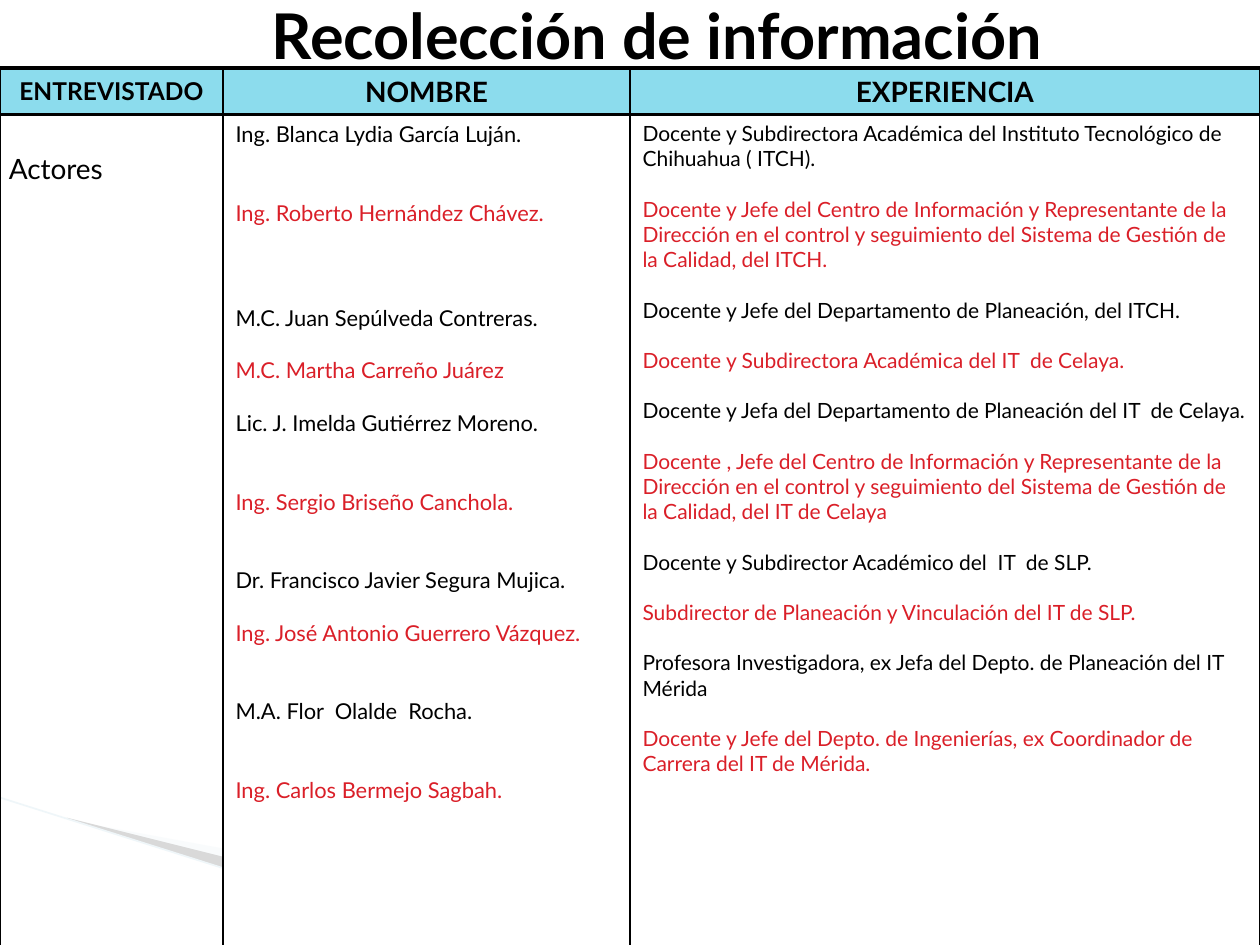
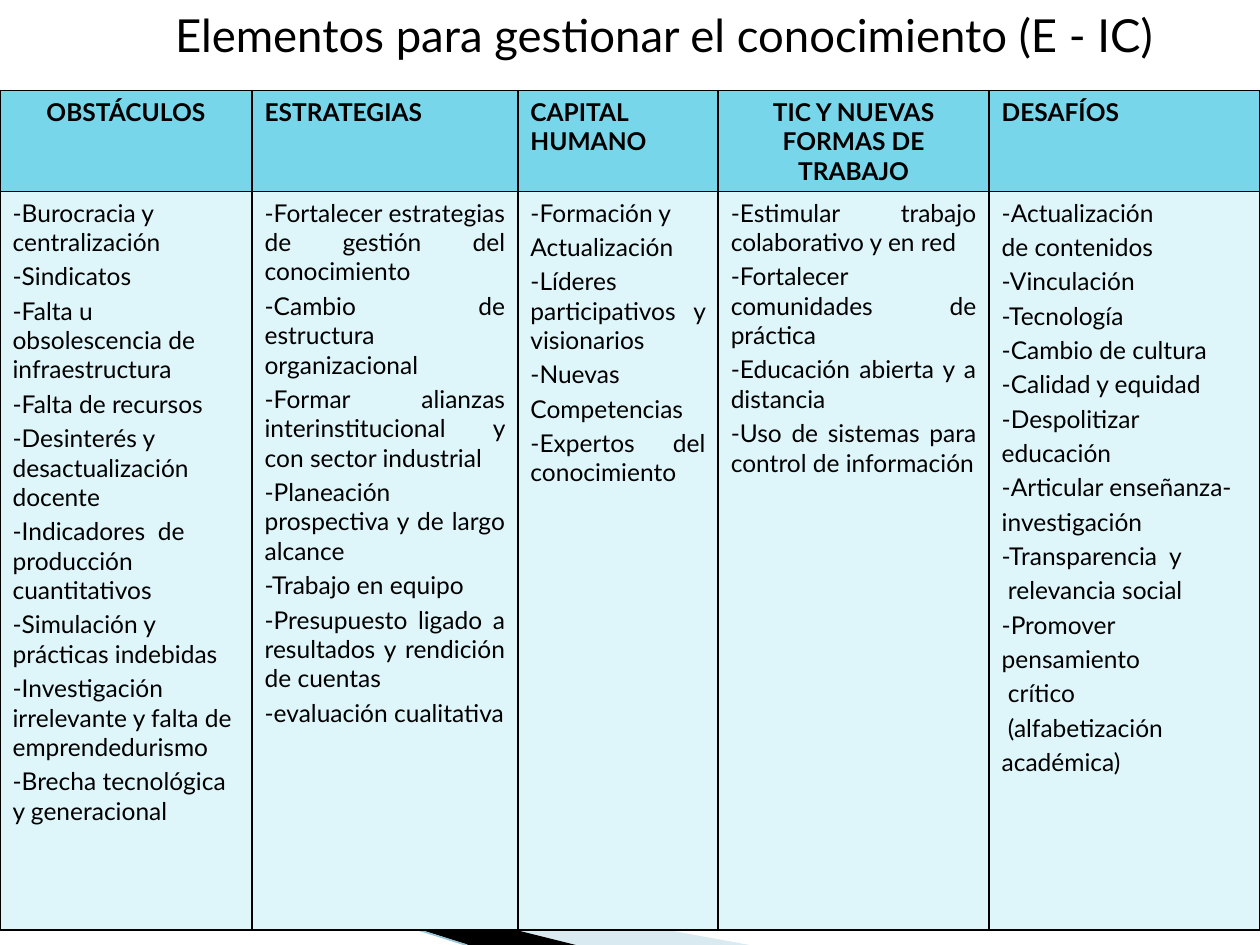
from dataclasses import dataclass
from typing import Optional

from lxml.etree import SubElement
from pptx import Presentation
from pptx.dml.color import RGBColor as Color
from pptx.enum.shapes import MSO_CONNECTOR as Connector
from pptx.enum.text import MSO_ANCHOR as Anchor, MSO_AUTO_SIZE as AutoSize, PP_ALIGN as Align
from pptx.oxml.ns import qn
from pptx.util import Emu, Inches, Pt

WIDTH, HEIGHT = Inches(10), Inches(7.5)


@dataclass(frozen=True)
class Theme:
    font: str = "Lato"
    ink: str = "000000"
    accent: str = "DA1F28"
    paper: str = "FFFFFF"
    header: str = "78D6EA"
    body: str = "DEF5FA"
    wave: str = "A0CBDC"
    wave_line: str = "97C5D8"
    line_height: float = 1.2
    thin: float = 1
    thick: float = 2.25


THEME = Theme()


@dataclass(frozen=True)
class Line:
    """One paragraph; before is in points, indent and hanging in inches."""
    text: str
    color: str = THEME.ink
    before: float = 0
    indent: float = 0
    hanging: float = 0


@dataclass(frozen=True)
class Borders:
    left: float = THEME.thin
    right: float = THEME.thin
    top: float = THEME.thin
    bottom: float = THEME.thin


@dataclass(frozen=True)
class CellSpec:
    lines: list[Line]
    size: float
    fill: str
    bold: bool = False
    align: Align = Align.LEFT
    anchor: Anchor = Anchor.TOP
    opacity: int = 100
    borders: Borders = Borders()
    margins: Optional[tuple[float, float]] = None  # sides and top, inches


@dataclass(frozen=True)
class Wedge:
    """A filled outline with points in percent of the slide."""
    points: list[tuple[float, float]]
    fill: str
    opacity: int = 100


WEDGES = [
    Wedge([(5.5, 86.8), (59.5, 100), (45.6, 100), (5.5, 86.67)], THEME.wave, 40),
    Wedge([(5.3, 86.53), (45.7, 100), (37.2, 100), (5.4, 86.67)], THEME.ink),
]


def across(percent: float) -> Emu:
    return Emu(round(WIDTH * percent / 100))


def down(percent: float) -> Emu:
    return Emu(round(HEIGHT * percent / 100))


def set_opacity(element, opacity: int) -> None:
    if opacity < 100:
        for color in element.iter(qn("a:srgbClr")):
            SubElement(color, qn("a:alpha"), val=str(opacity * 1000))


def style_font(para, size: float, color: str, bold: bool) -> None:
    para.font.name = THEME.font
    para.font.size = Pt(size)
    para.font.bold = bold
    para.font.color.rgb = Color.from_string(color)


def draw_wave(page) -> None:
    for wedge in WEDGES:
        start, *rest = [(across(x), down(y)) for x, y in wedge.points]
        builder = page.shapes.build_freeform(*start)
        builder.add_line_segments(rest, close=True)
        shape = builder.convert_to_shape()
        shape.shadow.inherit = False
        shape.fill.solid()
        shape.fill.fore_color.rgb = Color.from_string(wedge.fill)
        set_opacity(shape._element.spPr, wedge.opacity)
        shape.line.fill.background()
    edge = page.shapes.add_connector(
        Connector.STRAIGHT, 0, down(84.4), across(37), down(100))
    edge.line.color.rgb = Color.from_string(THEME.wave_line)
    edge.line.width = Pt(0.95)
    SubElement(edge._element.spPr, qn("a:effectLst"))


def add_page(deck, title: str, size: float, bold: bool):
    page = deck.slides.add_slide(deck.slide_layouts[5])
    box = page.shapes.title
    box.left, box.top = across(5.5), down(-3.6)
    box.width, box.height = across(94.5), down(14.53)
    frame = box.text_frame
    frame.text = title
    frame.auto_size = AutoSize.NONE
    frame.vertical_anchor = Anchor.MIDDLE
    para = frame.paragraphs[0]
    para.alignment = Align.CENTER
    style_font(para, size, THEME.ink, bold)
    draw_wave(page)
    return page


def draw_borders(cell, borders: Borders) -> None:
    properties = cell._tc.get_or_add_tcPr()
    sides = (("L", borders.left), ("R", borders.right),
             ("T", borders.top), ("B", borders.bottom))
    for place, (side, points) in enumerate(sides):
        line = SubElement(properties, qn(f"a:ln{side}"), w=str(Pt(points)))
        fill = SubElement(line, qn("a:solidFill"))
        SubElement(fill, qn("a:srgbClr"), val=THEME.ink)
        properties.insert(place, line)


def fill_cell(cell, spec: CellSpec) -> None:
    cell.fill.solid()
    cell.fill.fore_color.rgb = Color.from_string(spec.fill)
    set_opacity(cell._tc.get_or_add_tcPr(), spec.opacity)
    draw_borders(cell, spec.borders)
    cell.vertical_anchor = spec.anchor
    if spec.margins:
        side, top = spec.margins
        cell.margin_left = cell.margin_right = Inches(side)
        cell.margin_top, cell.margin_bottom = Inches(top), 0
    frame = cell.text_frame
    for number, line in enumerate(spec.lines):
        para = frame.add_paragraph() if number else frame.paragraphs[0]
        para.text = line.text
        para.alignment = spec.align
        if number:
            para.space_before = Pt(line.before)
        if line.indent or line.hanging:
            properties = para._p.get_or_add_pPr()
            properties.set("marL", str(Inches(line.indent + line.hanging)))
            properties.set("indent", str(-Inches(line.hanging)))
        style_font(para, spec.size, line.color, spec.bold)


def add_grid(page, top: float, widths: list[float], heights: list[float],
             rows: list[list[CellSpec]]) -> None:
    table = page.shapes.add_table(
        len(rows), len(widths), 0, down(top), WIDTH, down(sum(heights))).table
    table.first_row = table.horz_banding = False
    for column, width in zip(table.columns, widths):
        column.width = across(width)
    for row, height, specs in zip(table.rows, heights, rows):
        row.height = down(height)
        for cell, spec in zip(row.cells, specs):
            fill_cell(cell, spec)


def alternating(entries: list[tuple[int, str]], size: float) -> list[Line]:
    """Lines in alternate colours, each after a number of line heights."""
    colors = (THEME.ink, THEME.accent)
    return [Line(text, colors[number % 2], gap * size * THEME.line_height)
            for number, (gap, text) in enumerate(entries)]


# Slide 1: people interviewed
PEOPLE = [
    (0, "Ing. Blanca Lydia García Luján."),
    (2, "Ing. Roberto Hernández Chávez."),
    (3, "M.C. Juan Sepúlveda Contreras."),
    (1, "M.C. Martha Carreño Juárez"),
    (1, "Lic. J. Imelda Gutiérrez Moreno."),
    (2, "Ing. Sergio Briseño Canchola."),
    (2, "Dr. Francisco Javier Segura Mujica."),
    (1, "Ing. José Antonio Guerrero Vázquez."),
    (2, "M.A. Flor  Olalde  Rocha."),
    (2, "Ing. Carlos Bermejo Sagbah."),
]
EXPERIENCE = [
    "Docente y Subdirectora Académica del Instituto Tecnológico de Chihuahua ( ITCH).",
    "Docente y Jefe del Centro de Información y Representante de la Dirección en el "
    "control y seguimiento del Sistema de Gestión de la Calidad, del ITCH.",
    "Docente y Jefe del Departamento de Planeación, del ITCH.",
    "Docente y Subdirectora Académica del IT  de Celaya.",
    "Docente y Jefa del Departamento de Planeación del IT  de Celaya.",
    "Docente , Jefe del Centro de Información y Representante de la Dirección en el "
    "control y seguimiento del Sistema de Gestión de la Calidad, del IT de Celaya",
    "Docente y Subdirector Académico del  IT  de SLP.",
    "Subdirector de Planeación y Vinculación del IT de SLP.",
    "Profesora Investigadora, ex Jefa del Depto. de Planeación del IT Mérida",
    "Docente y Jefe del Depto. de Ingenierías, ex Coordinador de Carrera del IT de Mérida.",
]


def build_interviews(deck) -> None:
    page = add_page(deck, "Recolección de información ", 36, True)
    framed = Borders(top=THEME.thick, bottom=THEME.thick)
    under = Borders(top=THEME.thick)
    header = [
        CellSpec([Line(text)], size, THEME.header, True, Align.CENTER,
                 Anchor.MIDDLE, 85, framed)
        for text, size in (("ENTREVISTADO", 14), ("NOMBRE", 16), ("EXPERIENCIA", 16))]
    body = [
        CellSpec([Line("Actores")], 16, THEME.paper, opacity=85,
                 borders=under, margins=(0.07, 0.3)),
        CellSpec(alternating(PEOPLE, 12.5), 12.5, THEME.paper, borders=under),
        CellSpec(alternating([(1, text) for text in EXPERIENCE], 12), 12,
                 THEME.paper, borders=under),
    ]
    add_grid(page, 7.2, [17.7, 32.3, 50], [4.93, 89.47], [header, body])


# Slide 2: elements of knowledge management
@dataclass(frozen=True)
class Topic:
    name: str
    width: float
    items: list[str]
    name_align: Align = Align.JUSTIFY
    align: Align = Align.JUSTIFY
    hanging: float = 0
    inset: tuple[str, ...] = ()  # items set in by the width of a space


TOPICS = [
    Topic("OBSTÁCULOS", 20, [
        "-Burocracia y centralización", "-Sindicatos",
        "-Falta u obsolescencia de infraestructura", "-Falta de recursos",
        "-Desinterés y desactualización docente",
        "-Indicadores  de producción cuantitativos",
        "-Simulación y prácticas indebidas",
        "-Investigación irrelevante y falta de emprendedurismo",
        "-Brecha tecnológica y generacional"], Align.CENTER, Align.LEFT),
    Topic("ESTRATEGIAS", 21.1, [
        "-Fortalecer estrategias de gestión del conocimiento",
        "-Cambio de estructura organizacional",
        "-Formar alianzas interinstitucional y con sector industrial",
        "-Planeación prospectiva y de largo alcance", "-Trabajo en equipo",
        "-Presupuesto ligado a resultados y rendición de cuentas",
        "-evaluación cualitativa"]),
    Topic("CAPITAL HUMANO", 15.9, [
        "-Formación y", "Actualización", "-Líderes participativos y visionarios",
        "-Nuevas", "Competencias", "-Expertos del conocimiento"]),
    Topic("TIC Y NUEVAS FORMAS DE TRABAJO", 21.5, [
        "-Estimular trabajo colaborativo y en red",
        "-Fortalecer comunidades de práctica",
        "-Educación abierta y a distancia",
        "-Uso de sistemas para control de información"], Align.CENTER),
    Topic("DESAFÍOS", 21.5, [
        "-Actualización", "de contenidos", "-Vinculación", "-Tecnología",
        "-Cambio de cultura", "-Calidad y equidad", "-Despolitizar", "educación",
        "-Articular enseñanza-", "investigación", "-Transparencia  y",
        "relevancia social", "-Promover", "pensamiento", "crítico",
        "(alfabetización", "académica)"], align=Align.LEFT, hanging=0.38,
        inset=("relevancia social", "crítico", "(alfabetización")),
]


def build_elements(deck) -> None:
    page = add_page(deck, "Elementos para gestionar el conocimiento (E - IC)", 26, False)
    size = 14
    header = [CellSpec([Line(topic.name)], size, THEME.header, True, topic.name_align)
              for topic in TOPICS]
    body = [
        CellSpec([Line(item, before=size * 0.2, hanging=topic.hanging,
                       indent=0.05 if item in topic.inset else 0)
                  for item in topic.items], size, THEME.body, align=topic.align)
        for topic in TOPICS]
    add_grid(page, 9.6, [topic.width for topic in TOPICS], [10.67, 78.13], [header, body])


def main() -> None:
    deck = Presentation()
    deck.slide_width, deck.slide_height = WIDTH, HEIGHT
    build_interviews(deck)
    build_elements(deck)
    deck.save("out.pptx")


if __name__ == "__main__":
    main()
